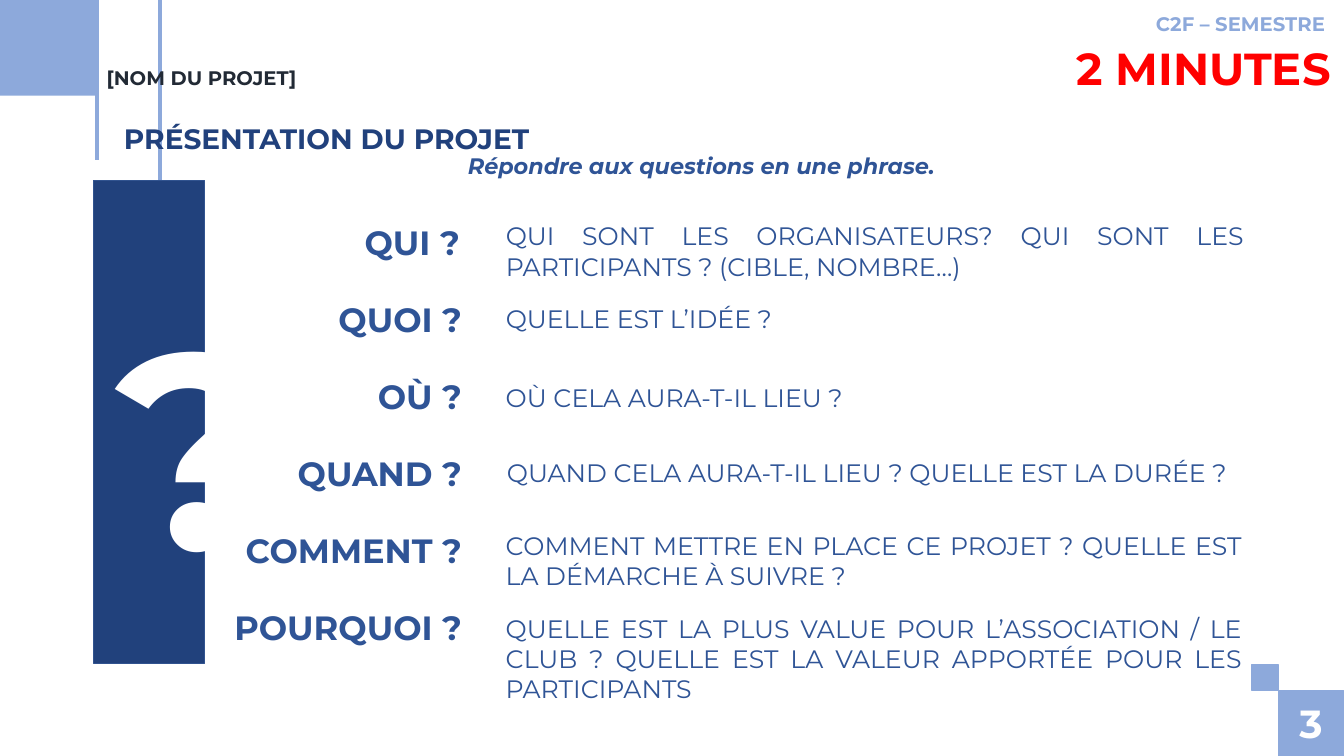
"""Build the project presentation slide with its six key questions."""
from dataclasses import dataclass

from lxml.etree import SubElement
from pptx import Presentation
from pptx.dml.color import RGBColor
from pptx.enum.shapes import MSO_CONNECTOR, MSO_SHAPE
from pptx.enum.text import MSO_AUTO_SIZE, PP_ALIGN
from pptx.oxml.ns import qn
from pptx.slide import Slide
from pptx.util import Pt

FONT = "Montserrat"
SKY, NAVY, BLUE = "8DA9DB", "21417C", "2F5496"
LEFT, CENTER, RIGHT, JUSTIFY = PP_ALIGN.LEFT, PP_ALIGN.CENTER, PP_ALIGN.RIGHT, PP_ALIGN.JUSTIFY
QUESTION_TOP, QUESTION_STEP = 154.8, 55.05


@dataclass
class Block:
    left: float
    top: float
    width: float
    height: float
    fill: str
    line: str | None = None


@dataclass
class Rule:
    x: float
    top: float
    bottom: float


@dataclass
class Label:
    text: str
    left: float
    top: float
    width: float
    height: float
    size: float
    color: str
    align: PP_ALIGN = LEFT
    bold: bool = True
    italic: bool = False


@dataclass
class Question:
    word: str
    answer: str
    top: float
    height: float
    word_left: float = 153.4
    answer_left: float = 354.2
    answer_width: float = 540


BLOCKS = [
    Block(-0.7, -0.7, 69.1, 69.1, SKY),
    Block(913, 493.2, 46.8, 46.8, SKY, SKY),
    Block(894.2, 474.5, 18.7, 18.7, SKY, SKY),
    Block(67, 128.9, 79.2, 344.9, NAVY, "31538F"),
]

RULES = [Rule(69.1, -0.7, 114.5), Rule(114.5, -46.1, 184.3)]

LABELS = [
    Label("[NOM DU PROJET]", 69.1, 43.2, 471.6, 24.5, 14, "222A35"),
    Label("3", 913, 496.1, 46.8, 41, 28, "FFFFFF", CENTER),
    Label("C2F – SEMESTRE ", 501.1, 5, 456.5, 24.5, 14, SKY, RIGHT),
    Label("PRÉSENTATION DU PROJET", 81.4, 83.5, 812.9, 31.7, 20, NAVY),
    Label("Répondre aux questions en une phrase.", 290.9, 105.1, 420.5, 26.6, 16, BLUE, CENTER,
          italic=True),
    Label("2 MINUTES", 759.6, 25.9, 198, 46.1, 32, "FF0000", RIGHT),
    Label("?", 75.6, 190.8, 61.2, 248.4, 199, "FFFFFF", CENTER),
]

QUESTIONS = [
    Question("QUI ?", "QUI SONT LES ORGANISATEURS? QUI SONT LES PARTICIPANTS ? (CIBLE, NOMBRE…)",
             154.1, 51.1, word_left=151.9, answer_width=541.4),
    Question("QUOI ?", "QUELLE EST L’IDÉE ?", 213.1, 28.8, answer_width=541.4),
    Question("OÙ ?", "OÙ CELA AURA-T-IL LIEU ?", 269.3, 28.8),
    Question("QUAND ?", "QUAND CELA AURA-T-IL LIEU ? QUELLE EST LA DURÉE ?", 323.3, 28.8,
             answer_left=355),
    Question("COMMENT ?", "COMMENT METTRE EN PLACE CE PROJET ? QUELLE EST LA DÉMARCHE À SUIVRE ?",
             375.1, 51.1),
    Question("POURQUOI ?", "QUELLE EST LA PLUS VALUE POUR L’ASSOCIATION / LE CLUB ? "
             "QUELLE EST LA VALEUR APPORTÉE POUR LES PARTICIPANTS", 434.2, 72.7),
]


def rgb(value: str) -> RGBColor:
    return RGBColor.from_string(value)


def draw_block(s: Slide, block: Block) -> None:
    sp = s.shapes.add_shape(MSO_SHAPE.RECTANGLE, Pt(block.left), Pt(block.top),
                            Pt(block.width), Pt(block.height))
    sp.shadow.inherit = False
    sp.fill.solid()
    sp.fill.fore_color.rgb = rgb(block.fill)
    if block.line:
        sp.line.color.rgb = rgb(block.line)
        sp.line.width = Pt(1)
    else:
        sp.line.fill.background()


def draw_rule(s: Slide, rule: Rule) -> None:
    cxn = s.shapes.add_connector(MSO_CONNECTOR.STRAIGHT, Pt(rule.x), Pt(rule.top),
                                 Pt(rule.x), Pt(rule.bottom))
    cxn.line.color.rgb = rgb(SKY)
    cxn.line.width = Pt(3)
    SubElement(cxn._element.spPr, qn("a:effectLst"))


def draw_label(s: Slide, label: Label) -> None:
    sp = s.shapes.add_textbox(Pt(label.left), Pt(label.top), Pt(label.width), Pt(label.height))
    tf = sp.text_frame
    tf.word_wrap = True
    tf.auto_size = MSO_AUTO_SIZE.SHAPE_TO_FIT_TEXT
    tf.text = label.text
    p = tf.paragraphs[0]
    p.alignment = label.align
    r = p.runs[0]
    r.font.name = FONT
    r.font.size = Pt(label.size)
    r.font.bold = label.bold
    r.font.italic = label.italic
    r.font.color.rgb = rgb(label.color)


def draw_question(s: Slide, index: int, question: Question) -> None:
    draw_label(s, Label(question.word, question.word_left, QUESTION_TOP + index * QUESTION_STEP,
                        183.6, 36, 24, BLUE, RIGHT))
    draw_label(s, Label(question.answer, question.answer_left, question.top,
                        question.answer_width, question.height, 18, BLUE, JUSTIFY, bold=False))


def main() -> None:
    prs = Presentation()
    prs.slide_width, prs.slide_height = Pt(960), Pt(540)
    s = prs.slides.add_slide(prs.slide_layouts[6])
    for rule in RULES:
        draw_rule(s, rule)
    for block in BLOCKS:
        draw_block(s, block)
    for label in LABELS:
        draw_label(s, label)
    for index, question in enumerate(QUESTIONS):
        draw_question(s, index, question)
    prs.save("out.pptx")


if __name__ == "__main__":
    main()
